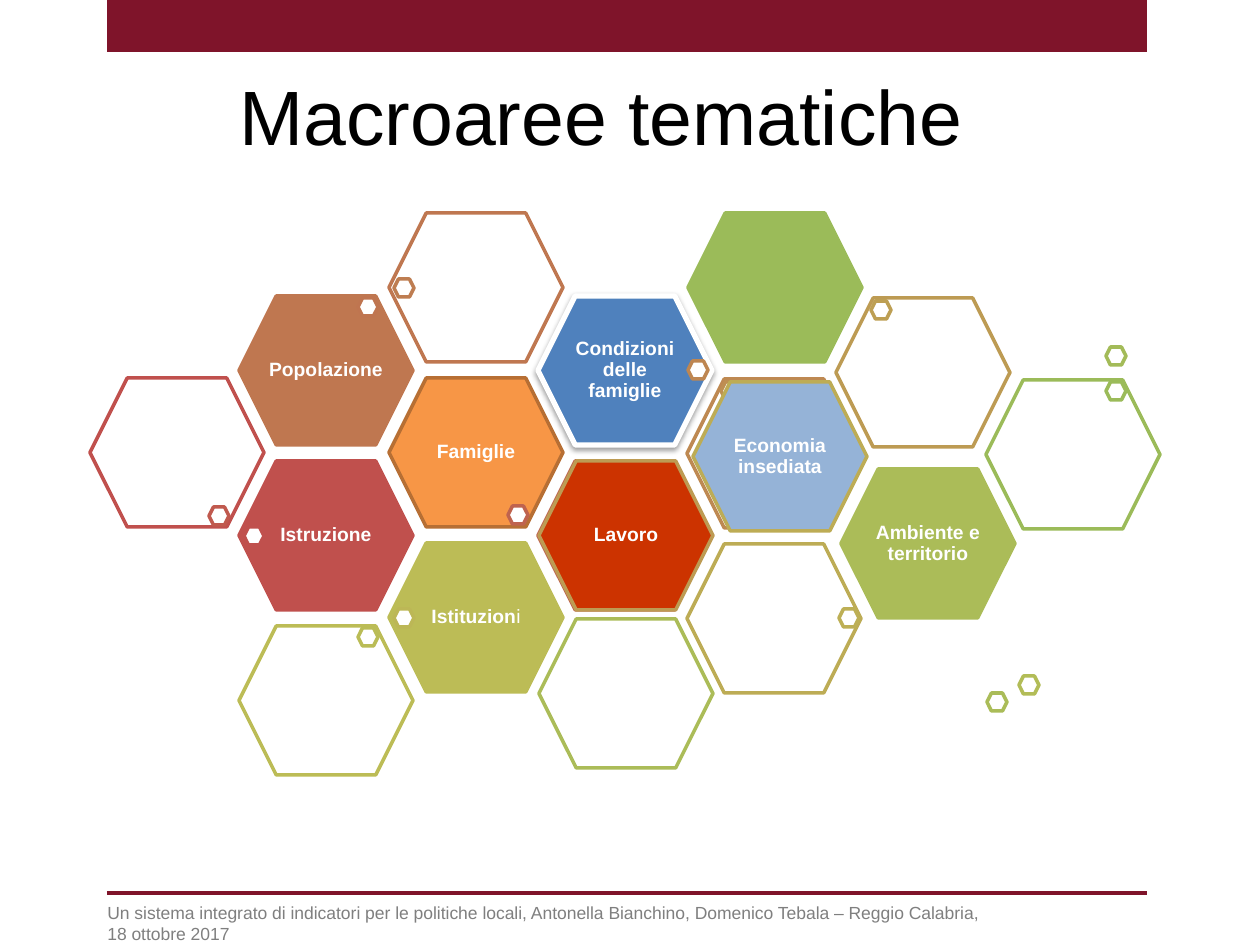
from dataclasses import dataclass

import pptx
import pptx.util
import pptx.dml.color
import pptx.enum.shapes
import pptx.enum.text
import pptx.oxml
import pptx.oxml.ns

RGB = pptx.dml.color.RGBColor.from_string
MSO_SHAPE = pptx.enum.shapes.MSO_SHAPE
ANCHOR = pptx.enum.text.MSO_ANCHOR
ALIGN = pptx.enum.text.PP_ALIGN

PX = 914400 // 126
FONT = "Arial"
WHITE = RGB("FFFFFF")
BLACK = RGB("000000")
GREY = RGB("7F7F7F")
MAROON = RGB("7F142A")
RED = RGB("C0504D")
ORANGE = RGB("F79646")
DARK_ORANGE = RGB("B76F34")
RUST = RGB("BF644F")
BROWN = RGB("BF7750")
BLUE = RGB("4F81BD")
LIGHT_BLUE = RGB("95B3D7")
TAN = RGB("BE8952")
SCARLET = RGB("CC3300")
GOLD = RGB("BD9B53")
MUSTARD = RGB("BDAC55")
OLIVE = RGB("BCBC56")
LIME = RGB("ABBC58")
GREEN = RGB("9BBB59")

GRID_X, GRID_Y, STEP_X, STEP_Y = 90, 213, 149.3, 82.6
HEX_W, HEX_H = 174, 149
DOT_W, DOT_H = 20, 18


@dataclass
class Cell:
    col: int
    row: int
    line: object
    fill: object = None
    label: str = ""
    dots: tuple = ()
    dx: int = 0
    dy: int = 0


CELLS = [
    Cell(1, 3, RED, RED, "Istruzione", ((244, 527, RED),)),
    Cell(0, 2, RED, dots=((209, 507, RGB("C0594E")),)),
    Cell(2, 2, DARK_ORANGE, ORANGE, "Famiglie", ((508, 506, RGB("BF634E")),)),
    Cell(3, 3, RUST),
    Cell(1, 1, BROWN, BROWN, "Popolazione", ((358, 298, RGB("BF7550")),)),
    Cell(2, 0, BROWN, dots=((394, 279, RGB("BE7D51")),)),
    Cell(3, 1, WHITE, BLUE, "Condizioni delle famiglie",
         ((688, 361, RGB("BE8651")),)),
    Cell(4, 2, TAN, dots=((721, 382, RGB("BE8F52")),), dy=1),
    Cell(3, 3, GOLD, SCARLET, "Lavoro", dx=1),
    Cell(5, 1, GOLD, dots=((871, 301, RGB("BD9F53")),), dy=2),
    Cell(4, 2, MUSTARD, LIGHT_BLUE, "Economia insediata", dx=6, dy=4),
    Cell(4, 4, MUSTARD, dots=((839, 609, RGB("BDAF55")),), dy=1),
    Cell(2, 4, OLIVE, OLIVE, "Istituzion|i", ((394, 609, RGB("BCB756")),)),
    Cell(1, 5, OLIVE, dots=((358, 628, RGB("BABC56")),)),
    Cell(5, 3, LIME, LIME, "Ambiente e territorio",
         ((1019, 676, RGB("B2BC57")),), dx=5, dy=8),
    Cell(3, 5, LIME, dots=((987, 693, RGB("AABC58")),), dx=1, dy=-7),
    Cell(4, 0, GREEN, GREEN, dots=((1106, 347, RGB("A3BB58")),), dx=1),
    Cell(6, 2, GREEN, dots=((1106, 382, GREEN),), dy=2),
]


def emu(*lengths):
    return [pptx.util.Emu(n * PX) for n in lengths]


def style_run(r, size, color, bold=False):
    r.font.name = FONT
    r.font.size = pptx.util.Pt(size)
    r.font.color.rgb = color
    r.font.bold = bold


def add_hexagon(s, x, y, w, h, fill, line, line_width=2):
    sp = s.shapes.add_shape(MSO_SHAPE.HEXAGON, *emu(x, y, w, h))
    sp.shadow.inherit = False
    sp.fill.solid()
    sp.fill.fore_color.rgb = fill
    sp.line.color.rgb = line
    sp.line.width = pptx.util.Pt(line_width)
    return sp


def set_opacity(sp, percent):
    clr = sp.fill._xPr.find(".//" + pptx.oxml.ns.qn("a:srgbClr"))
    alpha = clr.makeelement(pptx.oxml.ns.qn("a:alpha"),
                            {"val": str(percent * 1000)})
    clr.append(alpha)


def add_shadow(sp):
    effects = sp._element.spPr.find(pptx.oxml.ns.qn("a:effectLst"))
    effects.append(pptx.oxml.parse_xml(
        '<a:outerShdw %s blurRad="39370" dist="20320" dir="5400000" '
        'rotWithShape="0"><a:srgbClr val="000000"><a:alpha val="38000"/>'
        '</a:srgbClr></a:outerShdw>' % pptx.oxml.ns.nsdecls("a")))


def add_label(s, x, y, label):
    tf = s.shapes.add_textbox(*emu(x + 27, y + 23, 120, 103)).text_frame
    tf.word_wrap = True
    tf.vertical_anchor = ANCHOR.MIDDLE
    tf.margin_left = tf.margin_right = 0
    tf.margin_top = tf.margin_bottom = pptx.util.Inches(0.02)
    p = tf.paragraphs[0]
    p.alignment = ALIGN.CENTER
    p.line_spacing = 0.9
    for i, part in enumerate(label.split("|")):
        r = p.add_run()
        r.text = part
        style_run(r, 11, WHITE, bold=i == 0)


def add_cell(s, cell):
    x = round(GRID_X + STEP_X * cell.col) + cell.dx
    y = round(GRID_Y + STEP_Y * cell.row) + cell.dy
    raised = cell.line == WHITE
    sp = add_hexagon(s, x, y, HEX_W, HEX_H, cell.fill or WHITE, cell.line,
                     3 if raised else 2)
    if raised:
        add_shadow(sp)
    if cell.fill is None:
        set_opacity(sp, 90)
    if cell.label:
        add_label(s, x, y, cell.label)
    for dot_x, dot_y, line in cell.dots:
        add_hexagon(s, dot_x, dot_y, DOT_W, DOT_H, WHITE, line)


def add_frame(s):
    bar = s.shapes.add_shape(MSO_SHAPE.RECTANGLE, *emu(107, 0, 1040, 52))
    bar.shadow.inherit = False
    bar.fill.solid()
    bar.fill.fore_color.rgb = MAROON
    bar.line.fill.background()
    rule = s.shapes.add_connector(pptx.enum.shapes.MSO_CONNECTOR.STRAIGHT,
                                  *emu(107, 893, 1147, 893))
    rule.line.color.rgb = MAROON
    rule.line.width = pptx.util.Pt(2)
    rule._element.spPr.append(pptx.oxml.parse_xml(
        "<a:effectLst %s/>" % pptx.oxml.ns.nsdecls("a")))


def set_title(s, text):
    sp = s.shapes.title
    sp.left, sp.top, sp.width, sp.height = emu(45, 55, 1134, 158)
    tf = sp.text_frame
    tf.text = text
    tf.vertical_anchor = ANCHOR.TOP
    tf.margin_top = emu(14)[0]
    p = tf.paragraphs[0]
    p.alignment = ALIGN.CENTER
    style_run(p.runs[0], 44, BLACK)


def add_footer(s, text):
    tf = s.shapes.add_textbox(*emu(95, 896, 908, 55)).text_frame
    tf.word_wrap = True
    tf.text = text
    style_run(tf.paragraphs[0].runs[0], 10, GREY)


def main():
    prs = pptx.Presentation()
    prs.slide_width, prs.slide_height = emu(1260, 945)
    s = prs.slides.add_slide(prs.slide_layouts[5])
    add_frame(s)
    set_title(s, "Macroaree tematiche ")
    for cell in CELLS:
        add_cell(s, cell)
    add_footer(s, "Un sistema integrato di indicatori per le politiche locali, "
                  "Antonella Bianchino, Domenico Tebala – Reggio Calabria, "
                  "18 ottobre 2017")
    prs.save("out.pptx")


if __name__ == "__main__":
    main()
